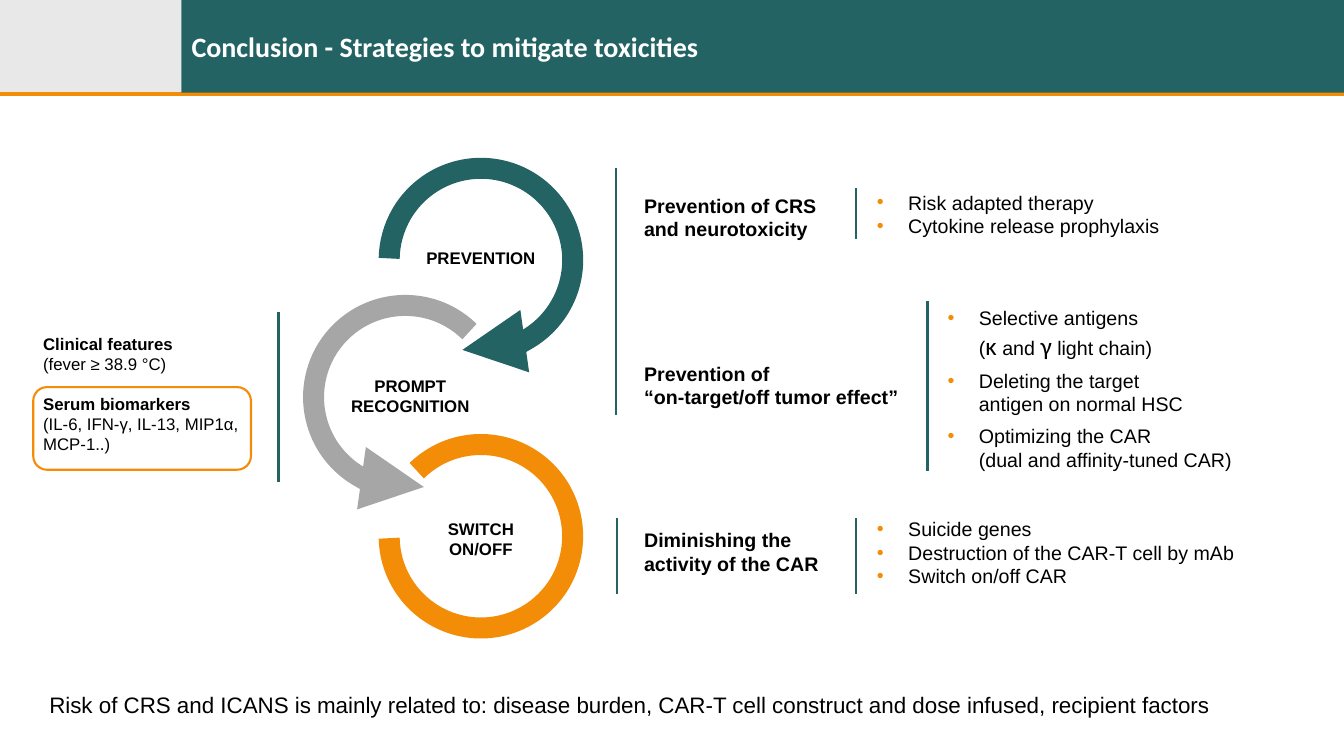
from lxml.etree import SubElement
from pptx import Presentation
from pptx.dml.color import RGBColor
from pptx.enum.shapes import MSO_CONNECTOR as CONN, MSO_SHAPE as SHAPE
from pptx.enum.text import MSO_ANCHOR, MSO_AUTO_SIZE as FIT, PP_ALIGN as ALIGN
from pptx.oxml.ns import qn
from pptx.util import Inches, Pt

TEAL, ORANGE, GREY = "236364", "F38D08", "A6A6A6"
BLACK, WHITE, DARK = "000000", "FFFFFF", "222222"
CELL = Inches(0.1)
COLS, ROWS = 133.3, 75
HEADER, TITLE_COL = 9.2, 18
RING = 18.2
GREEK = {"size": 18, "font": "Calibri"}


def grid(*cells):
    """Turn grid columns and rows into slide lengths."""
    return [round(c * CELL) for c in cells]


def color(value):
    return RGBColor.from_string(value)


def add_bullet(p, indent=3.1):
    pPr = p._p.get_or_add_pPr()
    width = grid(indent)[0]
    pPr.set("marL", str(width))
    pPr.set("indent", str(-width))
    bu = SubElement(pPr, qn("a:buClr"))
    SubElement(bu, qn("a:srgbClr"), val=ORANGE)
    SubElement(pPr, qn("a:buFont"), typeface="Arial")
    SubElement(pPr, qn("a:buChar"), char="•")


def add_run(p, text, size, font, bold, fill):
    for i, line in enumerate(text.split("\n")):
        if i:
            p.add_line_break()
        r = p.add_run()
        r.text = line
        r.font.size, r.font.name, r.font.bold = Pt(size), font, bold
        r.font.color.rgb = color(fill)


def write(tf, paras, size=14, font="Arial", bold=False, fill=BLACK,
          align=ALIGN.LEFT, bullet=False, gap=0):
    """Fill a text frame; a paragraph is a string or a list of (text, format) runs."""
    tf.word_wrap = True
    for i, runs in enumerate(paras):
        p = tf.add_paragraph() if i else tf.paragraphs[0]
        p.alignment = align
        if bullet:
            add_bullet(p)
        if i and gap:
            p.space_before = Pt(gap)
        for text, extra in [(runs, {})] if isinstance(runs, str) else runs:
            add_run(p, text, **{"size": size, "font": font, "bold": bold, "fill": fill, **extra})


def add_text(s, at, *paras, **fmt):
    tf = s.shapes.add_textbox(*grid(*at)).text_frame
    write(tf, paras, **fmt)
    tf.auto_size = FIT.SHAPE_TO_FIT_TEXT
    return tf


def add_shape(s, kind, at, fill=None, line=None, width=1.5):
    sp = s.shapes.add_shape(kind, *grid(*at))
    sp.shadow.inherit = False
    if fill:
        sp.fill.solid()
        sp.fill.fore_color.rgb = color(fill)
    else:
        sp.fill.background()
    if line:
        sp.line.color.rgb = color(line)
        sp.line.width = Pt(width)
    else:
        sp.line.fill.background()
    return sp


def add_line(s, x1, y1, x2, y2, stroke=TEAL, width=2):
    c = s.shapes.add_connector(CONN.STRAIGHT, *grid(x1, y1, x2, y2))
    c.line.color.rgb = color(stroke)
    c.line.width = Pt(width)
    SubElement(c._element.spPr, qn("a:effectLst"))


def add_ring(s, left, top, stroke, start, end, flip=False, arrow=True):
    """Draw an open ring between two angles in degrees."""
    sp = add_shape(s, SHAPE.ARC, (left, top, RING, RING), line=stroke, width=15)
    for i, angle in enumerate((start, end)):
        sp.adjustments[i] = angle * 0.6
    if flip:
        sp._element.spPr.find(qn("a:xfrm")).set("flipH", "1")
    if arrow:
        SubElement(sp.line._get_or_add_ln(), qn("a:tailEnd"), type="triangle")


def add_header(s, title):
    corner = add_shape(s, SHAPE.RECTANGLE, (0, 0, TITLE_COL, HEADER), DARK)
    SubElement(corner._element.spPr.find(".//" + qn("a:srgbClr")), qn("a:alpha"), val="10000")
    add_line(s, 0, 9.3, COLS, 9.3, ORANGE, 3)
    band = (TITLE_COL, 0, COLS - TITLE_COL, HEADER)
    add_shape(s, SHAPE.RECTANGLE, band, TEAL)
    sp = s.shapes.title
    s.shapes._spTree.append(sp._element)
    sp.left, sp.top, sp.width, sp.height = grid(*band)
    tf = sp.text_frame
    tf.auto_size, tf.vertical_anchor = FIT.NONE, MSO_ANCHOR.MIDDLE
    write(tf, [title], size=20, font="Calibri", bold=True, fill=WHITE)


def add_rings(s):
    add_ring(s, 38.6, 16.7, TEAL, 181.04, 101.67)
    add_ring(s, 31.1, 30.3, GREY, 225.62, 101.67, flip=True)
    add_ring(s, 38.6, 44.1, ORANGE, 225.62, 178.79, arrow=False)
    for left, top, height, *label in (
        (40.7, 24.1, 3, "PREVENTION"),
        (33.7, 36.8, 5, "PROMPT RECOGNITION"),
        (40.7, 51, 5, "SWITCH", "ON/OFF"),
    ):
        add_text(s, (left, top, 14, height), *label, size=12, bold=True, align=ALIGN.CENTER)


def add_signs(s):
    bold = {"bold": True}
    tf = add_text(s, (3.3, 32.6, 22, 13.1),
                  [("Clinical features", bold)], "(fever ≥ 38.9 °C)",
                  [("Serum biomarkers", bold)], "(IL-6, IFN-γ, IL-13, MIP1α, MCP-1..)", size=12)
    tf.paragraphs[2].space_before = Pt(14)
    add_shape(s, SHAPE.ROUNDED_RECTANGLE, (3.3, 38.4, 21.6, 8.2), line=ORANGE)


def add_strategies(s):
    for top, width, text in (
        (18.7, 22, "Prevention of CRS \nand neurotoxicity"),
        (35.4, 28.1, "Prevention of \n“on-target/off tumor effect”"),
        (51.9, 20.4, "Diminishing the \nactivity of the CAR"),
    ):
        add_text(s, (62.9, top, width, 5.7), text, bold=True)
    add_text(s, (86, 18.4, 43.3, 5.7), "Risk adapted therapy",
             "Cytokine release prophylaxis", bullet=True)
    add_text(s, (93, 29.9, 32.1, 17.5),
             [("Selective antigens \n(", {}), ("κ", GREEK), (" and ", {}),
              ("γ", GREEK), (" light chain)", {})],
             "Deleting the target \nantigen on normal HSC",
             "Optimizing the CAR \n(dual and affinity-tuned CAR)", bullet=True, gap=6)
    add_text(s, (86, 50.8, 43.3, 8.1), "Suicide genes",
             "Destruction of the CAR-T cell by mAb", "Switch on/off CAR", bullet=True)


def main():
    prs = Presentation()
    prs.slide_width, prs.slide_height = grid(COLS, ROWS)
    s = prs.slides.add_slide(prs.slide_layouts[5])
    add_header(s, "Conclusion - Strategies to mitigate toxicities")
    add_signs(s)
    add_rings(s)
    add_strategies(s)
    for col, top, bottom in (
        (27.6, 31, 47.8), (61.1, 16.7, 41.2), (61.2, 51.4, 58.9),
        (84.9, 18.7, 23.7), (92, 29.9, 46.7), (84.9, 51.4, 58.9),
    ):
        add_line(s, col, top, col, bottom)
    add_text(s, (3.9, 68.1, 120.5, 3.7),
             "Risk of CRS and ICANS is mainly related to: disease burden, "
             "CAR-T cell construct and dose infused, recipient factors", size=16)
    prs.save("out.pptx")


if __name__ == "__main__":
    main()
